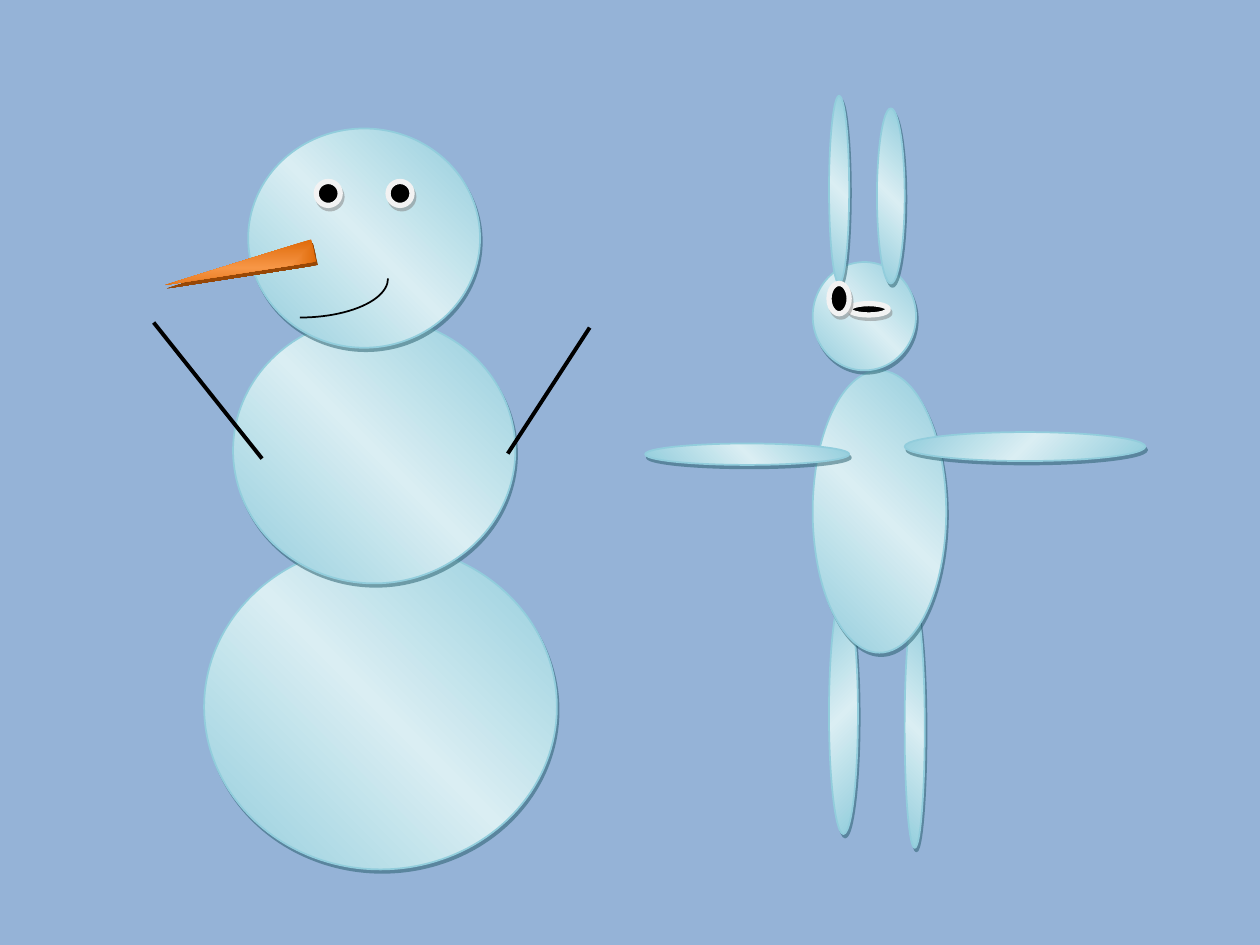
"""Draw a snowman and a rabbit built from shaded ovals."""
from copy import deepcopy
from typing import NamedTuple

from lxml import etree
from pptx import Presentation
from pptx import util as u
from pptx.dml.color import RGBColor
from pptx.enum import shapes
from pptx.oxml.ns import qn

OVAL = shapes.MSO_SHAPE.OVAL
DISC = shapes.MSO_SHAPE.FLOWCHART_CONNECTOR
ICE = [(0, "92CDDC"), (0.5, "DAEEF3"), (1, "92CDDC")]
CARROT = [(0, "F79646"), (1, "DF6A09")]


class Part(NamedTuple):
    left: float
    top: float
    width: float
    height: float
    kind: int = DISC
    flip: str = ""


class Stick(NamedTuple):
    x1: float
    y1: float
    x2: float
    y2: float


LEGS = [Part(6.58, 4.71, 0.23, 1.91, OVAL, "flipH"), Part(7.18, 4.82, 0.16, 1.91, OVAL)]
TRUNK = [Part(6.45, 2.94, 1.06, 2.24), Part(6.45, 2.08, 0.82, 0.86)]
EARS = [Part(6.58, 0.76, 0.16, 1.49, OVAL), Part(6.96, 0.86, 0.22, 1.39, OVAL)]
WINK = [Part(6.74, 2.41, 0.31, 0.09), Part(6.58, 2.25, 0.16, 0.24)]
PAWS = [Part(5.12, 3.52, 1.62, 0.17, OVAL), Part(7.18, 3.43, 1.91, 0.23, OVAL, "flipV")]
BALLS = [Part(1.62, 4.32, 2.8, 2.58), Part(1.85, 2.52, 2.24, 2.11), Part(1.97, 1.02, 1.84, 1.74)]
NOSE = Part(1.81, 1.52, 0.18, 1.21, shapes.MSO_SHAPE.FLOWCHART_MERGE)
EYES = [Part(x, 1.44, 0.19, 0.19) for x in (2.51, 3.08)]
MOUTH = Part(1.68, 1.9, 1.4, 0.62, shapes.MSO_SHAPE.ARC)
ARMS = [Stick(1.22, 2.56, 2.08, 3.64), Stick(4.68, 2.6, 4.03, 3.6)]


def tint(code: str) -> RGBColor:
    """Turn a hex string into a colour."""
    return RGBColor.from_string(code)


def outline(shape, code: str, width: float) -> None:
    """Give a shape or connector a solid line."""
    shape.line.color.rgb = tint(code)
    shape.line.width = u.Pt(width)


def place(slide, part: Part):
    """Add the bare shape of a part, without shadow or line."""
    shape = slide.shapes.add_shape(part.kind, *(u.Inches(v) for v in part[:4]))
    shape.shadow.inherit = False
    shape.line.fill.background()
    if part.flip:
        shape.element.spPr.get_or_add_xfrm().set(part.flip, "1")
    return shape


def paint(shape, code: str) -> None:
    """Fill a shape with one colour."""
    shape.fill.solid()
    shape.fill.fore_color.rgb = tint(code)


def blend(shape, stops: list) -> None:
    """Fill a shape with a diagonal gradient of any number of stops."""
    shape.fill.gradient()
    shape.fill.gradient_angle = 45
    row = shape.element.spPr.find(".//" + qn("a:gsLst"))
    for _ in stops[2:]:
        row.append(deepcopy(row[-1]))
    for stop, (place_at, code) in zip(shape.fill.gradient_stops, stops):
        stop.position = place_at
        stop.color.rgb = tint(code)


def centre(shape) -> None:
    """Make a gradient spread from the middle of its shape."""
    ramp = shape.element.spPr.find(qn("a:gradFill"))
    ramp.remove(ramp.find(qn("a:lin")))
    spread = etree.SubElement(ramp, qn("a:path"), {"path": "shape"})
    etree.SubElement(spread, qn("a:fillToRect"), dict.fromkeys("ltrb", "50000"))


def shade(shape, code: str, strength: int = 50) -> None:
    """Cast a short hard shadow down and to the right."""
    effects = shape.element.spPr.find(qn("a:effectLst"))
    cast = etree.SubElement(effects, qn("a:outerShdw"), {
        "dist": str(u.Pt(2.2)), "dir": str(63 * 60000), "algn": "ctr", "rotWithShape": "0"})
    hue = etree.SubElement(cast, qn("a:srgbClr"), {"val": code})
    etree.SubElement(hue, qn("a:alpha"), {"val": str(strength * 1000)})


def snow(slide, parts: list[Part]) -> None:
    """Draw icy body parts."""
    for part in parts:
        shape = place(slide, part)
        blend(shape, ICE)
        outline(shape, "92CDDC", 1)
        shade(shape, "205867")


def look(slide, parts: list[Part]) -> None:
    """Draw black eyes with pale rims."""
    for part in parts:
        shape = place(slide, part)
        paint(shape, "000000")
        outline(shape, "F2F2F2", 3)
        shade(shape, "7F7F7F")


def sniff(slide) -> None:
    """Draw the carrot nose."""
    shape = place(slide, NOSE)
    shape.rotation = 76.9
    blend(shape, CARROT)
    centre(shape)
    shade(shape, "974706", 100)


def smile(slide) -> None:
    """Draw the mouth as a quarter arc from right to bottom."""
    shape = place(slide, MOUTH)
    shape.adjustments[0] = 0
    shape.adjustments[1] = 54
    shape.fill.background()
    outline(shape, "000000", 1)


def reach(slide, stick: Stick) -> None:
    """Draw one stick arm."""
    line = slide.shapes.add_connector(
        shapes.MSO_CONNECTOR.STRAIGHT, *(u.Inches(v) for v in stick))
    outline(line, "000000", 2.25)
    etree.SubElement(line.element.spPr, qn("a:effectLst"))


def main() -> None:
    """Build and save the slide."""
    deck = Presentation()
    deck.slide_width, deck.slide_height = u.Inches(10), u.Inches(7.5)
    slide = deck.slides.add_slide(deck.slide_layouts[6])
    paint(place(slide, Part(0, -0.1, 10, 7.6, shapes.MSO_SHAPE.RECTANGLE)), "95B3D7")
    snow(slide, LEGS + TRUNK + EARS)
    look(slide, WINK)
    snow(slide, PAWS + BALLS)
    sniff(slide)
    look(slide, EYES)
    smile(slide)
    for stick in ARMS:
        reach(slide, stick)
    deck.save("out.pptx")


if __name__ == "__main__":
    main()
